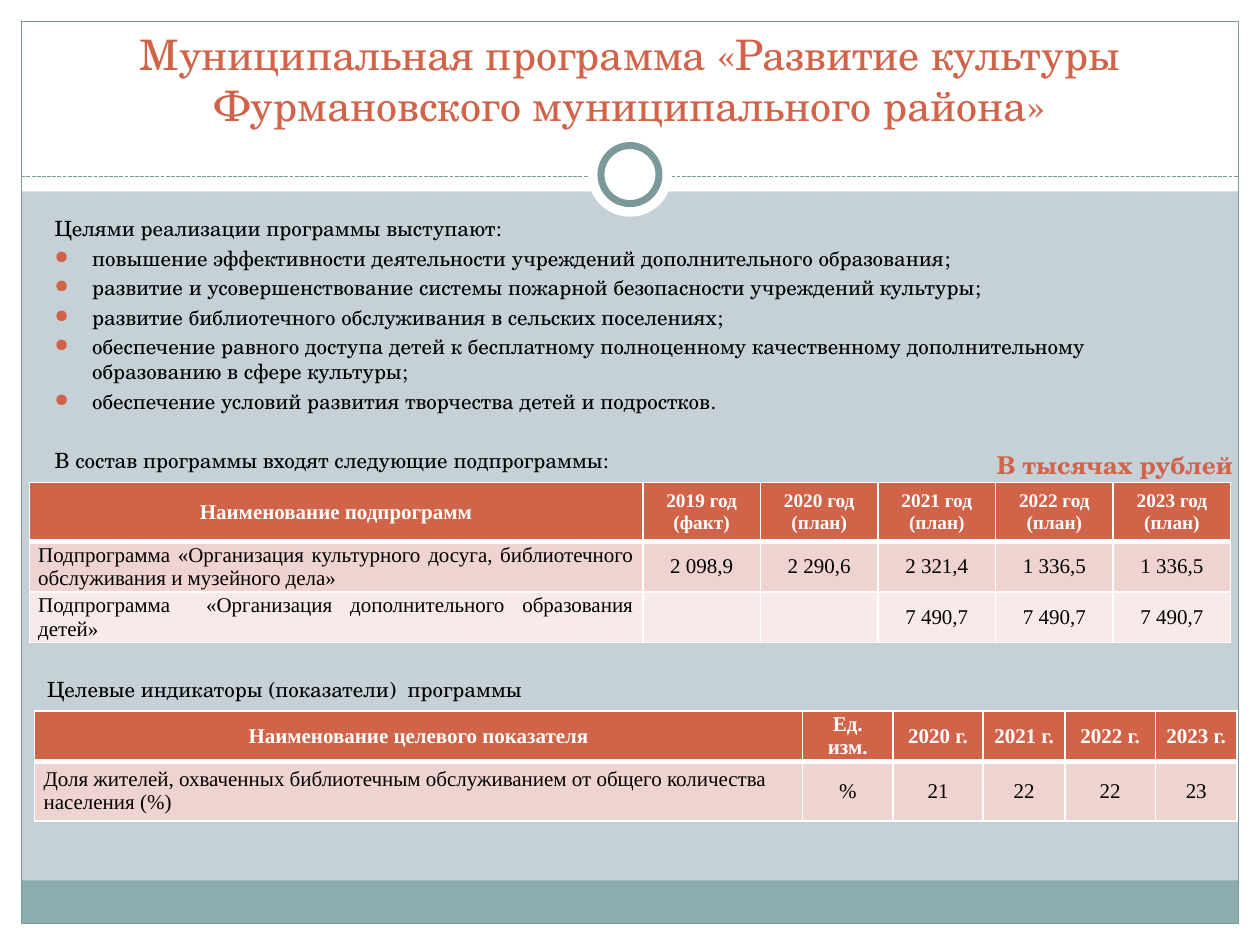
from collections import namedtuple

from lxml import etree
from pptx import Presentation
from pptx import util as u
from pptx.dml.color import RGBColor
from pptx.enum import dml, shapes, text
from pptx.oxml import ns

Box = namedtuple("Box", "left top width height")
COLORS = {
    "page": "C5D1D7", "white": "FFFFFF", "band": "8CADAE", "frame": "7C999A",
    "accent": "D16349", "black": "000000", "odd": "EED3D0", "even": "F7EAE9",
}
SERIF, TABLE_FONT = "TeX Gyre Schola", "Times New Roman"
CENTER, JUSTIFY, LEFT = text.PP_ALIGN.CENTER, text.PP_ALIGN.JUSTIFY, text.PP_ALIGN.LEFT

TITLE = "Муниципальная программа «Развитие культуры Фурмановского муниципального района»"
GOALS = [
    "повышение эффективности деятельности учреждений дополнительного образования;",
    "развитие и усовершенствование системы пожарной безопасности учреждений культуры;",
    "развитие библиотечного обслуживания в сельских поселениях;",
    "обеспечение равного доступа детей к бесплатному полноценному качественному "
    "дополнительному образованию в сфере культуры;",
    "обеспечение условий развития творчества детей и подростков.",
]
SUBPROGRAMS = [
    ["Наименование подпрограмм", "2019 год\n(факт)"]
    + [f"{year} год\n(план)" for year in range(2020, 2024)],
    ["Подпрограмма «Организация культурного досуга, библиотечного обслуживания и музейного дела»",
     "2 098,9", "2 290,6", "2 321,4", "1 336,5", "1 336,5"],
    ["Подпрограмма  «Организация дополнительного образования детей»",
     "", "", "7 490,7", "7 490,7", "7 490,7"],
]
INDICATORS = [
    ["Наименование целевого показателя", "Ед. изм."]
    + [f"{year} г." for year in range(2020, 2024)],
    ["Доля жителей, охваченных библиотечным обслуживанием от общего количества населения (%)",
     "%", "21", "22", "22", "23"],
]


def color(name):
    return RGBColor.from_string(COLORS[name])


def lengths(box):
    return [u.Cm(value) for value in box]


def add_child(parent, tag, **attributes):
    return etree.SubElement(parent, ns.qn(tag), attributes)


def add_figure(page, box, fill=None, line=None, width=0.75, kind=shapes.MSO_SHAPE.RECTANGLE):
    figure = page.shapes.add_shape(kind, *lengths(box))
    figure.shadow.inherit = False
    if fill:
        figure.fill.solid()
        figure.fill.fore_color.rgb = color(fill)
    else:
        figure.fill.background()
    if line:
        figure.line.color.rgb = color(line)
        figure.line.width = u.Pt(width)
    else:
        figure.line.fill.background()


def add_ring(page, center_x, center_y):
    for size, line in ((1.7, None), (1.17, "frame")):
        box = Box(center_x - size / 2, center_y - size / 2, size, size)
        add_figure(page, box, "white", line, 4, shapes.MSO_SHAPE.OVAL)


def add_backdrop(page, box):
    edge, header, rule = 0.43, 3.86, 3.56
    right, bottom = box.width - edge, box.height - edge
    for part in (
        Box(0, bottom, box.width, edge),
        Box(0, 0, box.width, header),
        Box(0, 0, edge, box.height),
        Box(right, 0, edge, box.height),
    ):
        add_figure(page, part, "white")
    add_figure(page, Box(edge, bottom - 0.87, right - edge, 0.87), "band")
    add_figure(page, Box(edge, edge, right - edge, bottom - edge), line="frame")
    divider = page.shapes.add_connector(
        shapes.MSO_CONNECTOR.STRAIGHT, u.Cm(edge), u.Cm(rule), u.Cm(right), u.Cm(rule))
    divider.line.color.rgb = color("frame")
    divider.line.width = u.Pt(0.75)
    divider.line.dash_style = dml.MSO_LINE.SQUARE_DOT
    add_child(divider._element.spPr, "a:effectLst")
    add_ring(page, box.width / 2, 3.52)


def style_para(para, size, name, font=SERIF, bold=False, align=LEFT):
    para.alignment = align
    para.font.size = u.Pt(size)
    para.font.name = font
    para.font.bold = bold
    para.font.color.rgb = color(name)


def add_label(page, box, words, size, name, bold=False, align=LEFT, anchor=text.MSO_ANCHOR.TOP):
    frame = page.shapes.add_textbox(*lengths(box)).text_frame
    frame.word_wrap = True
    frame.vertical_anchor = anchor
    frame.text = words
    for para in frame.paragraphs:
        style_para(para, size, name, bold=bold, align=align)
    return frame


def add_bullet(para):
    properties = para._p.get_or_add_pPr()
    indent = u.Cm(0.76)
    properties.set("marL", str(indent))
    properties.set("indent", str(-indent))
    bullet = [etree.Element(ns.qn(tag)) for tag in ("a:buClr", "a:buSzPct", "a:buChar")]
    add_child(bullet[0], "a:srgbClr", val=COLORS["accent"])
    bullet[1].set("val", "85000")
    bullet[2].set("char", "●")
    defaults = properties.find(ns.qn("a:defRPr"))
    for part in bullet:
        defaults.addprevious(part)


def add_goals(page, box):
    words = ["Целями реализации программы выступают:", *GOALS,
             "В состав программы входят следующие подпрограммы:"]
    paras = add_label(page, box, "\n".join(words), 12, "black").paragraphs
    for para in paras[1:-1]:
        para.space_before = u.Pt(2.4)
        add_bullet(para)
    paras[-1].space_before = u.Pt(19.5)


def set_borders(cell, top, bottom):
    properties = cell._tc.get_or_add_tcPr()
    for side, width in (("L", 1), ("R", 1), ("T", top), ("B", bottom)):
        line = add_child(properties, f"a:ln{side}", w=str(u.Pt(width)))
        add_child(add_child(line, "a:solidFill"), "a:srgbClr", val=COLORS["white"])


def add_grid(page, box, rows, widths, heights, year_size, name_align):
    grid = page.shapes.add_table(len(rows), len(widths), *lengths(box)).table
    for column, width in zip(grid.columns, widths):
        column.width = u.Cm(width)
    for r, (row, height) in enumerate(zip(rows, heights)):
        grid.rows[r].height = u.Cm(height)
        header = r == 0
        fill = "accent" if header else ("even", "odd")[r % 2]
        for c, words in enumerate(row):
            cell = grid.cell(r, c)
            set_borders(cell, 3 if r == 1 else 1, 3 if header else 1)
            cell.fill.solid()
            cell.fill.fore_color.rgb = color(fill)
            cell.margin_left = cell.margin_right = u.Cm(0.18)
            cell.margin_top = cell.margin_bottom = 0
            cell.vertical_anchor = text.MSO_ANCHOR.MIDDLE
            cell.text = words
            for para in cell.text_frame.paragraphs:
                style_para(para, year_size if header and c else 12,
                           "white" if header else "black", TABLE_FONT, header,
                           CENTER if header or c else name_align)


def main():
    deck = Presentation()
    deck.slide_width, deck.slide_height = u.Cm(25.4), u.Cm(19.05)
    page = deck.slides.add_slide(deck.slide_layouts[6])
    page.background.fill.solid()
    page.background.fill.fore_color.rgb = color("page")
    add_backdrop(page, Box(0, 0, 25.4, 19.05))
    add_label(page, Box(0.85, 0.64, 23.7, 2.1), TITLE, 24, "accent",
              align=CENTER, anchor=text.MSO_ANCHOR.BOTTOM)
    add_goals(page, Box(0.85, 4.23, 23.62, 12.7))
    add_grid(page, Box(0.59, 9.73, 24.22, 3.07), SUBPROGRAMS,
             [12.37] + [2.37] * 5, [1.19, 0.94, 0.94], 11, JUSTIFY)
    add_grid(page, Box(0.7, 14.33, 24.24, 2.13), INDICATORS,
             [15.48, 1.82, 1.82, 1.65, 1.82, 1.65], [0.93, 1.2], 12, LEFT)
    add_label(page, Box(0.7, 13.51, 17.27, 1.27),
              "Целевые индикаторы (показатели)  программы", 12, "black")
    add_label(page, Box(19.84, 8.94, 5.56, 1.19), "В тысячах рублей", 14, "accent", bold=True)
    deck.save("out.pptx")


if __name__ == "__main__":
    main()
